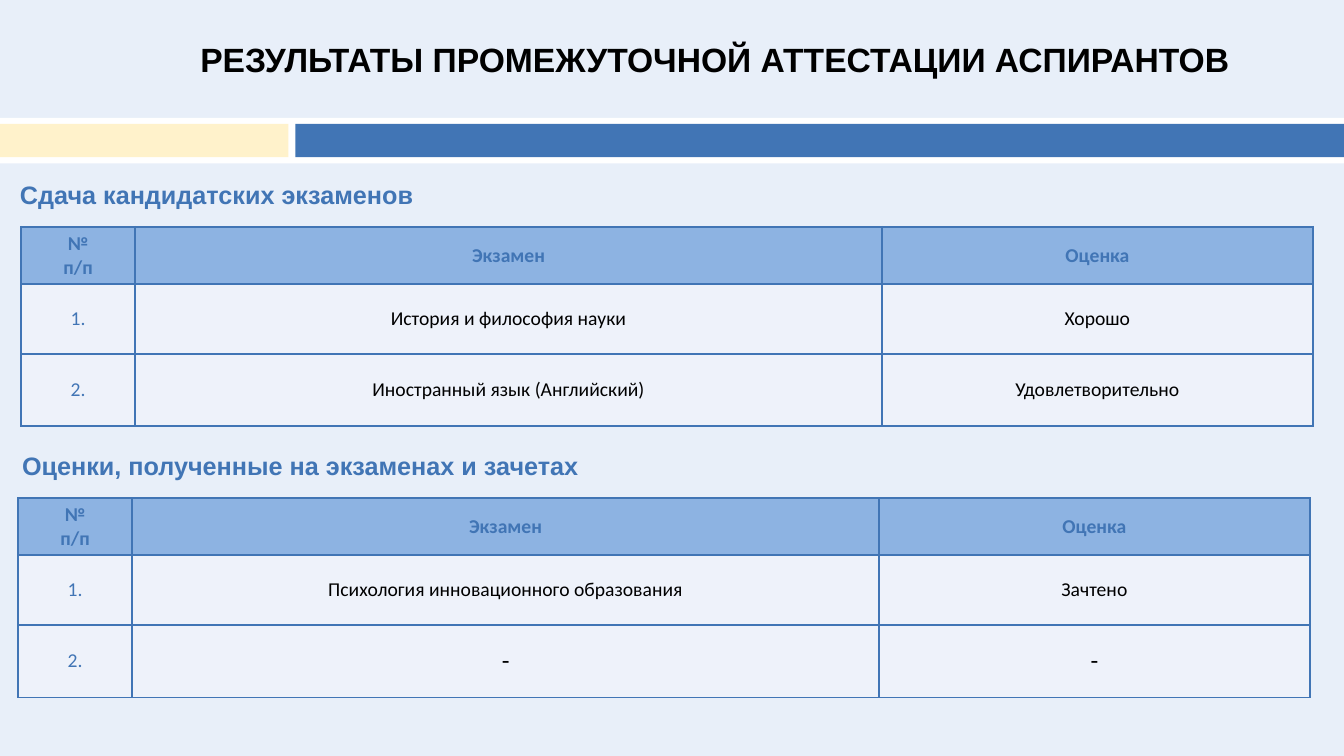
from lxml import etree
from pptx import Presentation
from pptx.dml.color import RGBColor
from pptx.enum.shapes import MSO_SHAPE
from pptx.enum.text import MSO_ANCHOR, PP_ALIGN
from pptx.oxml.ns import qn
from pptx.util import Inches, Pt

BACKGROUND = "E8EFF9"
BLACK = "000000"
WHITE = "FFFFFF"
BLUE = "4175B5"
CREAM = "FFF2CB"
HEADER_BLUE = "8DB3E2"
ROW_BLUE = "EEF2FA"

HEADER = ("№\nп/п", "Экзамен", "Оценка")
COLUMN_WIDTHS = (1.13, 7.41, 4.27)
ROW_HEIGHTS = (0.57, 0.69, 0.72)


def paint(fill, color):
    fill.solid()
    fill.fore_color.rgb = RGBColor.from_string(color)


def style_paragraph(paragraph, font_name, size, color, bold, align):
    paragraph.alignment = align
    font = paragraph.font
    font.name = font_name
    font.size = Pt(size)
    font.bold = bold
    font.color.rgb = RGBColor.from_string(color)


def add_band(slide, left, top, width, height, color):
    band = slide.shapes.add_shape(
        MSO_SHAPE.RECTANGLE, Inches(left), Inches(top), Inches(width), Inches(height))
    band.shadow.inherit = False
    paint(band.fill, color)
    band.line.fill.background()


def add_heading(slide, text, left, top, width, height, size, color, align=PP_ALIGN.LEFT):
    heading = slide.shapes.add_textbox(
        Inches(left), Inches(top), Inches(width), Inches(height))
    heading.text_frame.word_wrap = False
    paragraph = heading.text_frame.paragraphs[0]
    paragraph.text = text
    style_paragraph(paragraph, "Arial", size, color, True, align)


def add_borders(cell, color, width):
    """Draw all four cell borders; they must precede the fill in tcPr."""
    properties = cell._tc.get_or_add_tcPr()
    for position, side in enumerate(("a:lnL", "a:lnR", "a:lnT", "a:lnB")):
        line = etree.Element(qn(side), w=str(Pt(width)))
        solid = etree.SubElement(line, qn("a:solidFill"))
        etree.SubElement(solid, qn("a:srgbClr"), val=color)
        properties.insert(position, line)


def fill_cell(cell, text, fill, color, bold):
    cell.text = text
    cell.vertical_anchor = MSO_ANCHOR.MIDDLE
    paint(cell.fill, fill)
    add_borders(cell, BLUE, 1.5)
    size = 18 if text == "-" else 14
    for paragraph in cell.text_frame.paragraphs:
        style_paragraph(paragraph, "Calibri", size, color, bold, PP_ALIGN.CENTER)


def add_grades_table(slide, left, top, grades):
    """Add a table of numbered (exam, grade) pairs under the common header."""
    table = slide.shapes.add_table(
        len(ROW_HEIGHTS), len(COLUMN_WIDTHS), Inches(left), Inches(top),
        Inches(sum(COLUMN_WIDTHS)), Inches(sum(ROW_HEIGHTS))).table
    for column, width in zip(table.columns, COLUMN_WIDTHS):
        column.width = Inches(width)
    for row, height in zip(table.rows, ROW_HEIGHTS):
        row.height = Inches(height)

    for column, title in enumerate(HEADER):
        fill_cell(table.cell(0, column), title, HEADER_BLUE, BLUE, True)
    for number, (exam, grade) in enumerate(grades, start=1):
        fill_cell(table.cell(number, 0), f"{number}.", ROW_BLUE, BLUE, False)
        fill_cell(table.cell(number, 1), exam, ROW_BLUE, BLACK, False)
        fill_cell(table.cell(number, 2), grade, ROW_BLUE, BLACK, False)


def main():
    presentation = Presentation()
    presentation.slide_width = Inches(13.33)
    presentation.slide_height = Inches(7.5)
    slide = presentation.slides.add_slide(presentation.slide_layouts[6])
    paint(slide.background.fill, BACKGROUND)

    add_heading(slide, "РЕЗУЛЬТАТЫ ПРОМЕЖУТОЧНОЙ АТТЕСТАЦИИ АСПИРАНТОВ",
                1.79, 0.34, 10.6, 0.5, 24, BLACK, PP_ALIGN.CENTER)
    add_band(slide, 0, 1.17, 13.33, 0.45, WHITE)
    add_band(slide, 2.93, 1.23, 10.4, 0.33, BLUE)
    add_band(slide, 0, 1.23, 2.86, 0.33, CREAM)

    add_heading(slide, "Сдача кандидатских экзаменов", 0.1, 1.73, 4.14, 0.4, 18, BLUE)
    add_grades_table(slide, 0.21, 2.25, (
        ("История и философия науки", "Хорошо"),
        ("Иностранный язык (Английский)", "Удовлетворительно"),
    ))

    add_heading(slide, "Оценки, полученные на экзаменах и зачетах",
                0.12, 4.42, 5.78, 0.4, 18, BLUE)
    add_grades_table(slide, 0.18, 4.94, (
        ("Психология инновационного образования", "Зачтено"),
        ("-", "-"),
    ))

    presentation.save("out.pptx")


if __name__ == "__main__":
    main()
